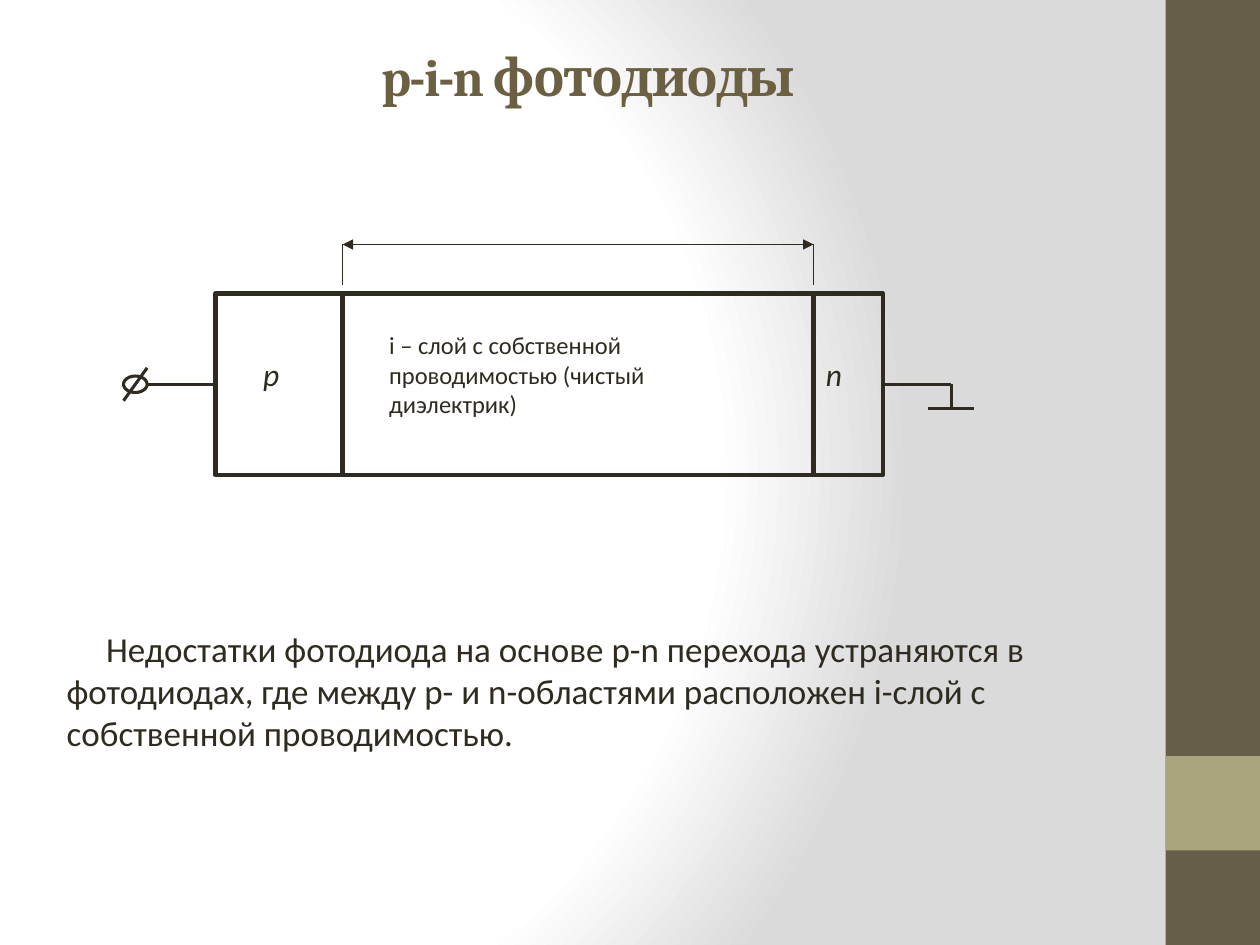
import pptx
import pptx.util
import pptx.oxml
import pptx.dml.color
import pptx.enum.shapes
import pptx.enum.text
import lxml.etree
from pptx.oxml.ns import qn

Pt = pptx.util.Pt
SHAPE = pptx.enum.shapes.MSO_SHAPE
COLORS = {
    "ink": "2F2B20",
    "title": "6C6042",
    "bar": "675E47",
    "accent": "A9A57C",
    "white": "FFFFFF",
    "edge": "DADADA",
}
BODY_FONT = "Calibri"


def color(name):
    return pptx.dml.color.RGBColor.from_string(COLORS[name])


def add_run(para, text, size, font=BODY_FONT, ink="ink", bold=False, italic=False):
    span = para.add_run()
    span.text = text
    span.font.size = Pt(size)
    span.font.name = font
    span.font.bold = bold
    span.font.italic = italic
    span.font.color.rgb = color(ink)
    return span


def add_text(page, box, text, size, italic=False):
    frame = page.shapes.add_textbox(*map(Pt, box)).text_frame
    frame.word_wrap = True
    para = frame.paragraphs[0]
    add_run(para, text, size, italic=italic)
    return para


def add_block(page, box, kind=SHAPE.RECTANGLE, fill=None, line=None):
    shape = page.shapes.add_shape(kind, *map(Pt, box))
    shape.shadow.inherit = False
    if fill:
        shape.fill.solid()
        shape.fill.fore_color.rgb = color(fill)
    else:
        shape.fill.background()
    if line:
        shape.line.color.rgb = color("ink")
        shape.line.width = Pt(line)
    else:
        shape.line.fill.background()


def add_line(page, ends, width, arrows=False):
    line = page.shapes.add_connector(
        pptx.enum.shapes.MSO_CONNECTOR.STRAIGHT, *map(Pt, ends))
    line.line.color.rgb = color("ink")
    line.line.width = Pt(width)
    if arrows:
        outline = line.line._get_or_add_ln()
        for end in ("a:headEnd", "a:tailEnd"):
            lxml.etree.SubElement(outline, qn(end), type="triangle")
    lxml.etree.SubElement(line.element.spPr, qn("a:effectLst"))


def paint_background(page):
    page.background.fill.gradient()
    gradient = page.element.find(".//" + qn("a:gradFill"))
    for child in list(gradient):
        gradient.remove(child)
    stops = lxml.etree.SubElement(gradient, qn("a:gsLst"))
    for position, name in ((0, "white"), (75, "white"), (100, "edge")):
        stop = lxml.etree.SubElement(stops, qn("a:gs"), pos=str(position * 1000))
        lxml.etree.SubElement(stop, qn("a:srgbClr"), val=COLORS[name])
    path = lxml.etree.SubElement(gradient, qn("a:path"), path="circle")
    lxml.etree.SubElement(path, qn("a:fillToRect"),
                          l="20000", t="50000", r="100000", b="50000")


def add_sidebar(page, box):
    left, top, width, height = box
    add_block(page, box, fill="bar")
    add_block(page, (left, top + height * 0.8, width, width), fill="accent")


def add_title(page, box):
    title = page.shapes.title
    title.left, title.top, title.width, title.height = map(Pt, box)
    frame = title.text_frame
    frame.word_wrap = True
    frame.vertical_anchor = pptx.enum.text.MSO_ANCHOR.TOP
    para = frame.paragraphs[0]
    para.alignment = pptx.enum.text.PP_ALIGN.CENTER
    span = add_run(para, "p-i-n фотодиоды", 29.7, "Cambria", "title", bold=True)
    span.font._element.set("spc", "-100")


def add_diode(page, box):
    left, top, width, height = box
    right, middle = left + width, top + height / 2
    i_left, i_right = left + 72.7, right - 39.6
    thin, wire = 0.75, 1.75

    # The three layers: p, i, n
    edges = (left, i_left, i_right, right)
    for start, end in zip(edges, edges[1:]):
        add_block(page, (start, top, end - start, height), line=2.5)

    # Dimension line over the i layer
    dimension = top - 28.1
    for edge in (i_left, i_right):
        add_line(page, (edge, top - 5, edge, dimension), thin)
    add_line(page, (i_left, dimension, i_right, dimension), thin, arrows=True)

    # Ground on the right
    ground_x, ground_y = right + 39, middle + 14
    add_line(page, (right, middle, ground_x, middle), wire)
    add_line(page, (ground_x, middle, ground_x, ground_y), wire)
    add_line(page, (ground_x - 13, ground_y, ground_x + 13, ground_y), wire)

    # Terminal on the left
    ring_left, ring_right = left - 52.5, left - 39
    add_line(page, (left, middle, ring_right, middle), wire)
    add_block(page, (ring_left, middle - 4.7, ring_right - ring_left, 9.4),
              SHAPE.OVAL, line=wire)
    add_line(page, (ring_right, middle - 9.4, ring_left, middle + 9.4), wire)

    # Layer names
    add_text(page, (left + 20.2, top + 31.7, 44, 29), "p", 18, italic=True)
    add_text(page, (i_left + 19.5, top + 17.3, 216, 58),
             "i – слой с собственной проводимостью (чистый диэлектрик)", 14)
    add_text(page, (i_right, top + 31.7, 48, 29), "n", 18, italic=True)


def add_body(page, box):
    para = add_text(
        page, box,
        "Недостатки фотодиода на основе p-n перехода устраняются в фотодиодах, "
        "где между p- и n-областями расположен i-слой с собственной проводимостью.",
        20)
    para._p.get_or_add_pPr().set("indent", str(Pt(22.6)))


def main():
    deck = pptx.Presentation()
    deck.slide_width, deck.slide_height = Pt(720), Pt(540)
    page = deck.slides.add_slide(deck.slide_layouts[5])
    paint_background(page)
    add_sidebar(page, (666, 0, 54, 540))
    add_title(page, (36, 21.6, 600, 90))
    add_body(page, (31, 355, 623.5, 128))
    add_diode(page, (123.1, 167.8, 381.4, 103.6))
    deck.save("out.pptx")


if __name__ == "__main__":
    main()
